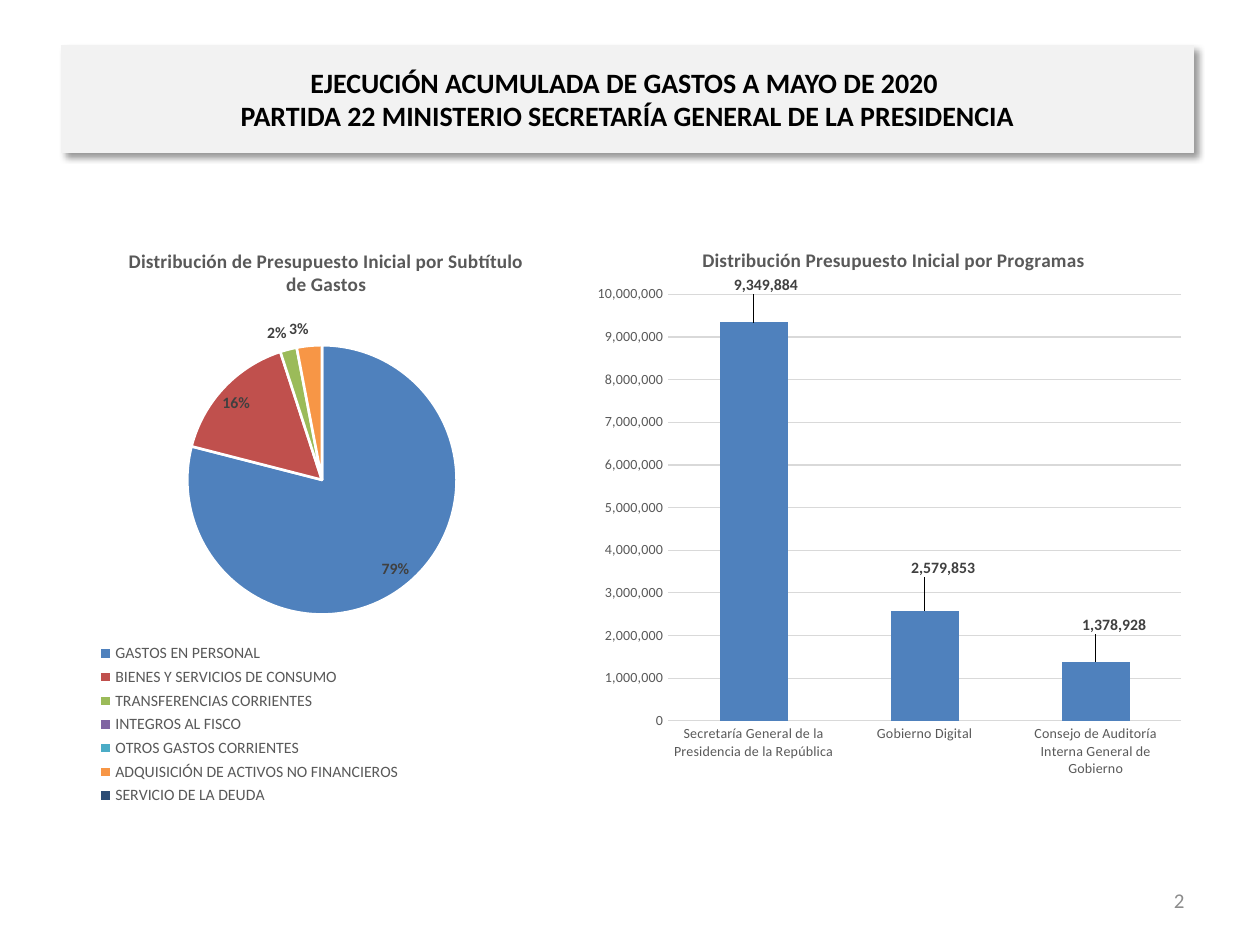
from lxml import etree
from pptx import Presentation
from pptx.chart.data import CategoryChartData
from pptx.dml.color import RGBColor
from pptx.enum.chart import XL_CHART_TYPE, XL_LABEL_POSITION, XL_LEGEND_POSITION, XL_TICK_MARK
from pptx.enum.text import MSO_ANCHOR, MSO_AUTO_SIZE, PP_ALIGN
from pptx.oxml import parse_xml
from pptx.oxml.ns import nsdecls, qn
from pptx.util import Pt

PIE, COLUMN = XL_CHART_TYPE.PIE, XL_CHART_TYPE.COLUMN_CLUSTERED
BEST_FIT, OUTSIDE_END = XL_LABEL_POSITION.BEST_FIT, XL_LABEL_POSITION.OUTSIDE_END
BOTTOM, NO_TICK = XL_LEGEND_POSITION.BOTTOM, XL_TICK_MARK.NONE
CENTER, RIGHT = PP_ALIGN.CENTER, PP_ALIGN.RIGHT

# Content
TITLE = ("EJECUCIÓN ACUMULADA DE GASTOS A MAYO DE 2020 \n"
         "PARTIDA 22 MINISTERIO SECRETARÍA GENERAL DE LA PRESIDENCIA")
PAGE = "2"
FONT, GREY, DARK = "Calibri", "595959", "404040"
PIE_TITLE = "Distribución de Presupuesto Inicial por Subtítulo de Gastos"
SUBTITLES = [  # name, percent, colour
    ("GASTOS EN PERSONAL", 79, "4F81BD"),
    ("BIENES Y SERVICIOS DE CONSUMO", 16, "C0504D"),
    ("TRANSFERENCIAS CORRIENTES", 2, "9BBB59"),
    ("INTEGROS AL FISCO", None, "8064A2"),
    ("OTROS GASTOS CORRIENTES", None, "4BACC6"),
    ("ADQUISICIÓN DE ACTIVOS NO FINANCIEROS", 3, "F79646"),
    ("SERVICIO DE LA DEUDA", 0, "2C4D75"),
]
BAR_TITLE = "Distribución Presupuesto Inicial por Programas"
PROGRAMS = [  # name, amount, label offset as a share of the chart
    ("Secretaría General de la Presidencia de la República", 9349884, (0.02, -0.04)),
    ("Gobierno Digital", 2579853, (0.03, -0.05)),
    ("Consejo de Auditoría Interna General de Gobierno", 1378928, (0.03, -0.04)),
]


def rgb(value):
    return RGBColor.from_string(value)


def style(font, size, color, bold=False):
    font.name, font.size, font.bold = FONT, Pt(size), bold
    font.color.rgb = rgb(color)


def write(tf, text, size=12, color="000000", bold=False, align=CENTER):
    p = tf.paragraphs[0]
    p.alignment = align
    for i, line in enumerate(text.split("\n")):
        if i:
            p.add_line_break()
        r = p.add_run()
        r.text = line
        style(r.font, size, color, bold)


def layout(x, y, w=None, h=None, target=None, edge=True):
    """Manual chart layout, in shares of the chart's size."""
    node = parse_xml(f"<c:layout {nsdecls('c')}><c:manualLayout/></c:layout>")
    rules = [("layoutTarget", target)]
    if edge:
        rules += [("xMode", "edge"), ("yMode", "edge")]
    for tag, val in rules + [("x", x), ("y", y), ("w", w), ("h", h)]:
        if val is not None:
            etree.SubElement(node[0], qn(f"c:{tag}")).set("val", str(val))
    return node


def place(parent, node, after):
    """Put a layout after the named child, or first when there is none."""
    for old in parent.findall(qn("c:layout")):
        parent.remove(old)
    anchor = parent.find(qn(f"c:{after}")) if after else None
    if anchor is None:
        parent.insert(0, node)
    else:
        anchor.addnext(node)


def add_chart(slide, kind, rows, title, box, title_at, plot, number_format):
    data = CategoryChartData(number_format=number_format)
    data.categories = [row[0] for row in rows]
    data.add_series("Series 1", [row[1] for row in rows])
    chart = slide.shapes.add_chart(kind, *map(Pt, box), data).chart
    style(chart.font, 10, "000000")
    chart.has_title = True
    write(chart.chart_title.text_frame, title, 11, GREY, True)
    chart.chart_title.include_in_layout = False
    space = chart.chart_title.text_frame and chart.element if hasattr(chart, "element") else chart._chartSpace
    place(space.chart.find(qn("c:title")), layout(*title_at), "tx")
    place(space.chart.plotArea, layout(*plot, target="inner"), None)
    chart.has_legend = False
    return chart


prs = Presentation()
prs.slide_width, prs.slide_height = Pt(720), Pt(540)
slide = prs.slides.add_slide(prs.slide_layouts[5])

# Title band with shadow
title = slide.shapes.title
title.left, title.top, title.width, title.height = Pt(35), Pt(26), Pt(647), Pt(61)
title.fill.solid()
title.fill.fore_color.rgb = rgb("F2F2F2")
title.line.color.rgb = rgb("F2F2F2")
title.line.width = Pt(0.75)
title.element.spPr.append(parse_xml(
    f'<a:effectLst {nsdecls("a")}><a:outerShdw blurRad="{Pt(4)}" dist="{Pt(3)}" dir="2700000" '
    'algn="tl" rotWithShape="0"><a:srgbClr val="000000"><a:alpha val="40000"/></a:srgbClr>'
    '</a:outerShdw></a:effectLst>'))
tf = title.text_frame
tf.auto_size, tf.vertical_anchor = MSO_AUTO_SIZE.NONE, MSO_ANCHOR.MIDDLE
write(tf, TITLE, 16, bold=True)

# Pie: initial budget by expense subtitle
chart = add_chart(slide, PIE, SUBTITLES, PIE_TITLE, (36, 126, 296, 337),
                  (0.12, 0.04), (0.24, 0.21, 0.52, 0.46), "#,##0")
plot = chart.plots[0]
plot.vary_by_categories = True
for i, (_, _, color) in enumerate(SUBTITLES):
    fmt = plot.series[0].points[i].format
    fmt.fill.solid()
    fmt.fill.fore_color.rgb = rgb(color)
    fmt.line.color.rgb = rgb("FFFFFF")
    fmt.line.width = Pt(1.5)
labels = plot.series[0].data_labels
labels.show_percentage, labels.show_value = True, False
labels.number_format, labels.number_format_is_linked = "0%", False
labels.position = BEST_FIT
style(labels.font, 9, DARK, True)
chart.has_legend = True
legend = chart.legend
legend.position, legend.include_in_layout = BOTTOM, False
style(legend.font, 9, GREY)
place(chart._chartSpace.chart.find(qn("c:legend")), layout(0.06, 0.71, 0.6, 0.29), "legendPos")

# Columns: initial budget by program
chart = add_chart(slide, COLUMN, PROGRAMS, BAR_TITLE, (333, 126, 349, 325),
                  (0.19, 0.04), (0.14, 0.13, 0.84, 0.75), "#,##0")
plot = chart.plots[0]
plot.gap_width, plot.vary_by_categories = 150, False
series = plot.series[0]
series.format.fill.solid()
series.format.fill.fore_color.rgb = rgb("4F81BD")
for i, (_, _, offset) in enumerate(PROGRAMS):
    label = series.points[i].data_label
    style(label.font, 9, DARK, True)
    label.position = OUTSIDE_END
    place(series.data_labels._element.findall(qn("c:dLbl"))[i], layout(*offset, edge=False), "idx")
labels = series.data_labels
labels.show_value, labels.position = True, OUTSIDE_END
labels.number_format, labels.number_format_is_linked = "#,##0", False
style(labels.font, 9, DARK, True)

# Axes
for axis in (chart.category_axis, chart.value_axis):
    axis.major_tick_mark = axis.minor_tick_mark = NO_TICK
    axis.format.line.fill.background()
    style(axis.tick_labels.font, 8, GREY)
axis = chart.value_axis
axis.minimum_scale, axis.maximum_scale, axis.major_unit = 0, 10000000, 1000000
axis.tick_labels.number_format, axis.tick_labels.number_format_is_linked = "#,##0", False
axis.major_gridlines.format.line.color.rgb = rgb("D9D9D9")
axis.major_gridlines.format.line.width = Pt(0.75)

# Page number
tf = slide.shapes.add_textbox(Pt(516), Pt(500), Pt(168), Pt(29)).text_frame
tf.word_wrap, tf.vertical_anchor = True, MSO_ANCHOR.MIDDLE
write(tf, PAGE, 12, "8C8C8C", align=RIGHT)

prs.save("out.pptx")
